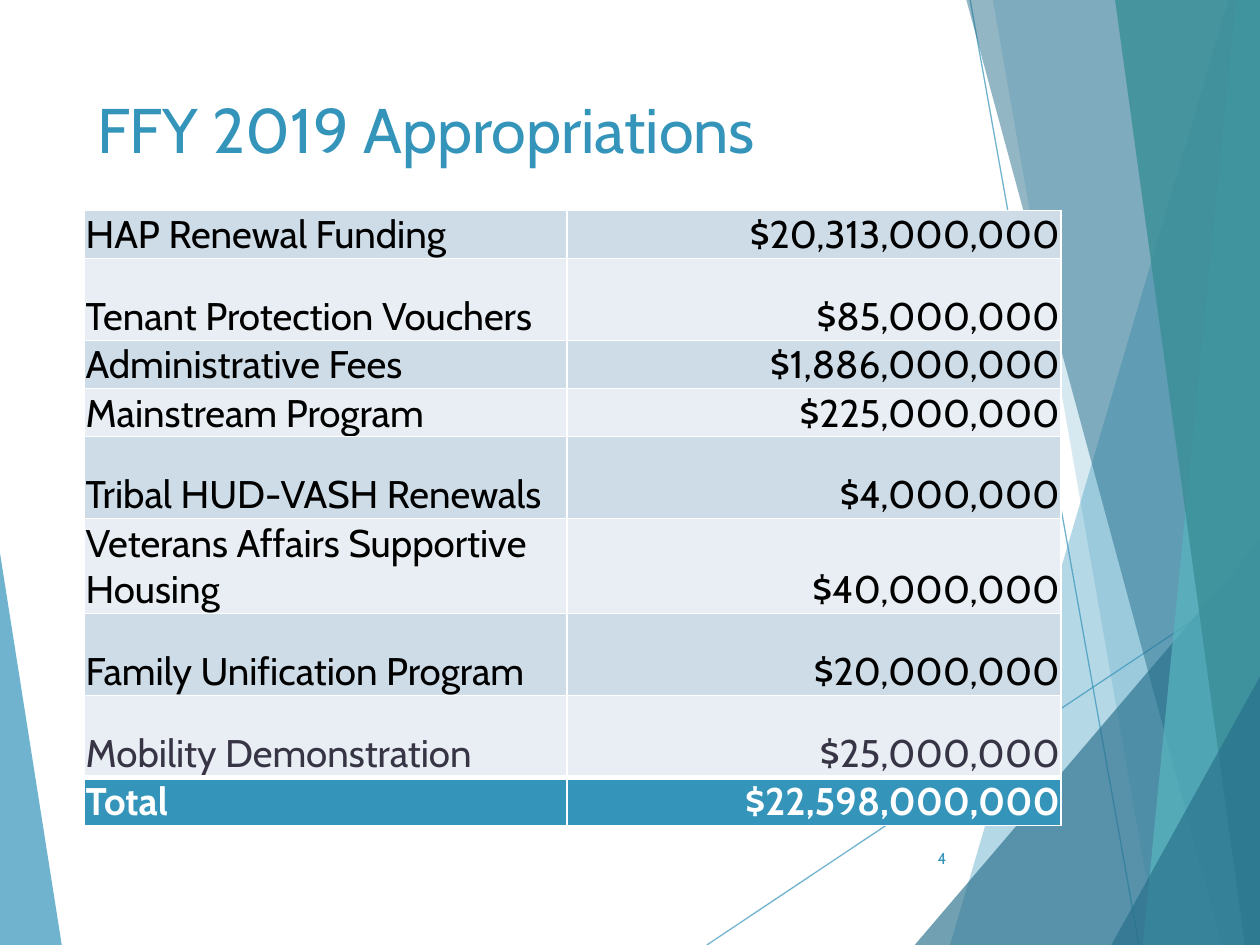
from dataclasses import dataclass

from lxml import etree
from pptx import Presentation
from pptx.dml.color import RGBColor as RGB
from pptx.enum.shapes import MSO_CONNECTOR as Connector
from pptx.enum.text import MSO_ANCHOR as Anchor, MSO_AUTO_SIZE as AutoSize, PP_ALIGN as Align
from pptx.oxml import parse_xml
from pptx.oxml.ns import nsdecls, qn
from pptx.util import Inches, Pt


@dataclass(frozen=True)
class Theme:
    font: str = "Cabin"
    blue: str = "3494BA"
    deep_blue: str = "276F8B"
    aqua: str = "58B6C0"
    teal: str = "3A8F98"
    dark_band: str = "CEDCE7"
    light_band: str = "E8EEF3"
    black: str = "000000"
    slate: str = "373545"
    white: str = "FFFFFF"
    title_size: int = 36
    table_size: int = 22
    number_size: int = 9


THEME = Theme()


def write(frame, text, size, color, bold=False, align=Align.LEFT):
    paragraph = frame.paragraphs[0]
    paragraph.alignment = align
    run = paragraph.add_run()
    run.text = text
    run.font.name = THEME.font
    run.font.size = Pt(size)
    run.font.bold = bold
    run.font.color.rgb = RGB.from_string(color)


def paint(fill, color, opacity, owner):
    """Give a fill a solid colour that lets the parts behind show through."""
    fill.solid()
    fill.fore_color.rgb = RGB.from_string(color)
    tint = next(owner.iter(qn("a:srgbClr")))
    etree.SubElement(tint, qn("a:alpha"), val=str(opacity * 1000))


# Grid: 1000 columns by 750 rows of square cells
deck = Presentation()
deck.slide_width, deck.slide_height = Inches(10), Inches(7.5)
CELL = deck.slide_width // 1000
RIGHT, BOTTOM = 1000, 750

slide = deck.slides.add_slide(deck.slide_layouts[5])
title = slide.shapes.title

# Background facets: corners, colour, opacity; thin lines lie above the first
left_wedge = [(0, 439), (49, BOTTOM), (0, BOTTOM)]
right_facets = [
    ([(975, 0), (754, BOTTOM), (RIGHT, BOTTOM), (RIGHT, 0)], THEME.blue, 36),
    ([(788, 0), (919, BOTTOM), (RIGHT, BOTTOM), (RIGHT, 0)], THEME.blue, 20),
    ([(726, BOTTOM), (RIGHT, 429), (RIGHT, BOTTOM)], THEME.deep_blue, 66),
    ([(767, 0), (970, BOTTOM), (RIGHT, BOTTOM), (RIGHT, 0)], THEME.deep_blue, 50),
    ([(981, 0), (907, BOTTOM), (RIGHT, BOTTOM), (RIGHT, 0)], THEME.aqua, 70),
    ([(885, 0), (988, BOTTOM), (RIGHT, BOTTOM), (RIGHT, 0)], THEME.teal, 82),
    ([(882, BOTTOM), (RIGHT, 537), (RIGHT, BOTTOM)], THEME.deep_blue, 66),
]
thin_lines = [(561, BOTTOM, RIGHT, 457), (770, 0, 904, BOTTOM)]

for ends in thin_lines:
    thin_line = slide.shapes.add_connector(Connector.STRAIGHT, *(CELL * end for end in ends))
    thin_line.line.width = Pt(0.75)
    properties = thin_line.element.spPr
    paint(thin_line.line.fill, THEME.blue, 70, properties)
    etree.SubElement(properties, qn("a:effectLst"))

for corners, color, opacity in [(left_wedge, THEME.blue, 70), *right_facets]:
    outline = slide.shapes.build_freeform(*corners[0], scale=CELL)
    outline.add_line_segments(corners[1:], close=True)
    facet = outline.convert_to_shape()
    facet.shadow.inherit = False
    paint(facet.fill, color, opacity, facet.element.spPr)
    facet.line.fill.background()

# Title, in front of the facets
title.element.getparent().append(title.element)
title.left, title.top, title.width, title.height = (CELL * n for n in (67, 67, 694, 144))
title.text_frame.auto_size = AutoSize.NONE
title.text_frame.vertical_anchor = Anchor.TOP
write(title.text_frame, "FFY 2019 Appropriations", THEME.title_size, THEME.blue)

# Appropriations table: programme, amount, row height
appropriations = [
    ("HAP Renewal Funding", "$20,313,000,000", 33),
    ("Tenant Protection Vouchers", "$85,000,000", 65),
    ("Administrative Fees", "$1,886,000,000", 33),
    ("Mainstream Program", "$225,000,000", 33),
    ("Tribal HUD-VASH Renewals", "$4,000,000", 65),
    ("Veterans Affairs Supportive Housing", "$40,000,000", 65),
    ("Family Unification Program", "$20,000,000", 65),
    ("Mobility Demonstration", "$25,000,000", 65),
    ("Total", "$22,598,000,000", 33),
]
total_row = len(appropriations) - 1
column_widths = (383, 392)
table = slide.shapes.add_table(
    len(appropriations), 2, CELL * 67, CELL * 167, CELL * sum(column_widths),
    CELL * sum(height for *_, height in appropriations)).table
table.first_row = table.horz_banding = False
for column, width in zip(table.columns, column_widths):
    column.width = CELL * width

for row, (program, amount, height) in enumerate(appropriations):
    table.rows[row].height = CELL * height
    is_total = row == total_row
    band = THEME.blue if is_total else (THEME.dark_band, THEME.light_band)[row % 2]
    ink = {total_row: THEME.white, total_row - 1: THEME.slate}.get(row, THEME.black)
    # The rule above the total is heavier than the others
    rules = {"lnL": 1, "lnR": 1, "lnT": 3 if is_total else 1,
             "lnB": 3 if row == total_row - 1 else 1}
    for column, (text, align) in enumerate([(program, Align.LEFT), (amount, Align.RIGHT)]):
        entry = table.cell(row, column)
        entry.margin_left = entry.margin_right = entry.margin_top = CELL
        entry.margin_bottom = 0
        entry.vertical_anchor = Anchor.BOTTOM
        for side, points in rules.items():
            entry._tc.get_or_add_tcPr().append(parse_xml(
                f'<a:{side} {nsdecls("a")} w="{Pt(points)}"><a:solidFill>'
                f'<a:srgbClr val="{THEME.white}"/></a:solidFill></a:{side}>'))
        entry.fill.solid()
        entry.fill.fore_color.rgb = RGB.from_string(band)
        write(entry.text_frame, text, THEME.table_size, ink, bold=is_total, align=align)

# Slide number
number = slide.shapes.add_textbox(*(CELL * n for n in (705, 661, 56, 40))).text_frame
number.word_wrap = True
number.vertical_anchor = Anchor.MIDDLE
write(number, "4", THEME.number_size, THEME.blue, align=Align.RIGHT)

deck.save("out.pptx")
